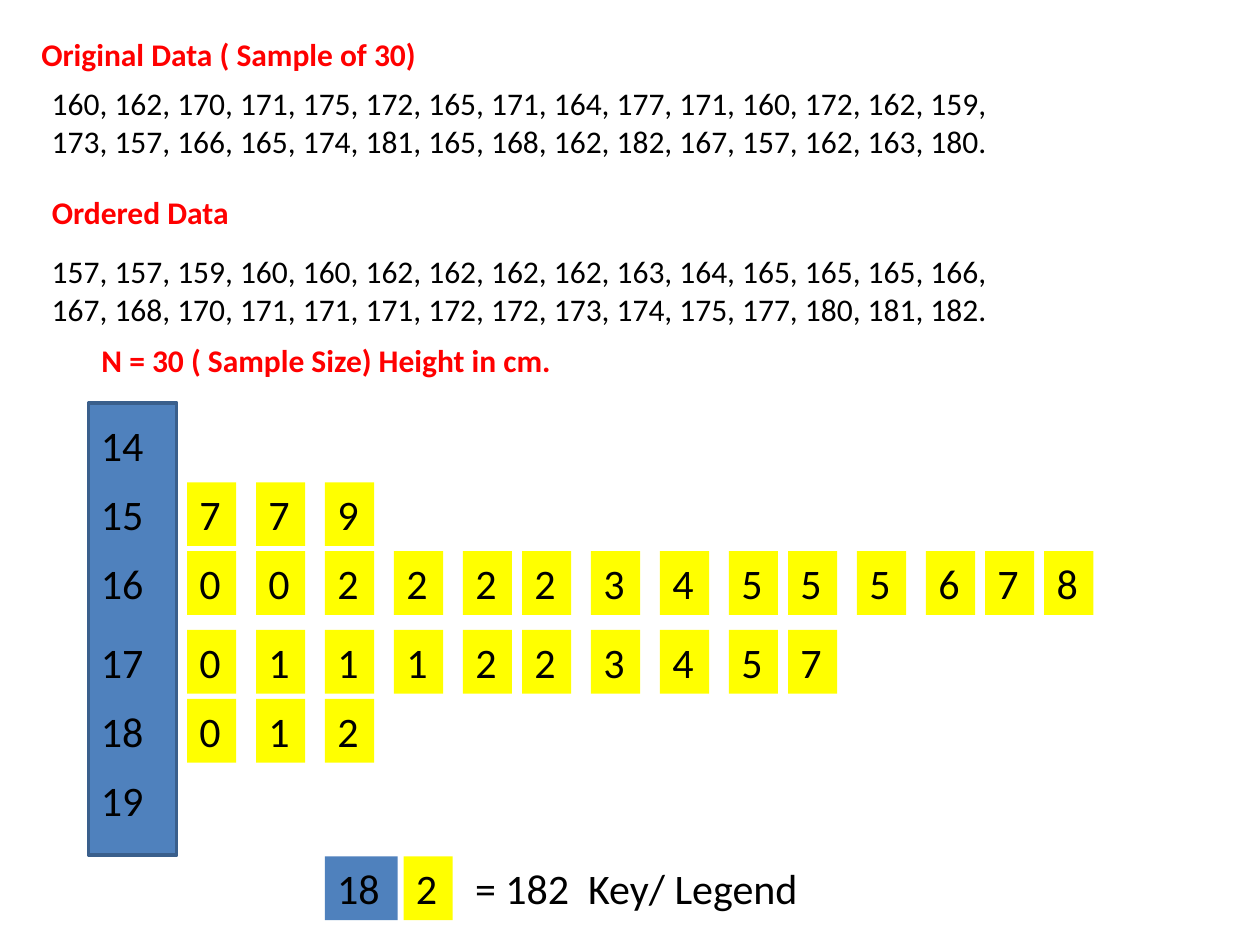
import itertools

import pptx
import pptx.dml.color
import pptx.enum.shapes
import pptx.enum.text
import pptx.util

Pt = pptx.util.Pt
RGBColor = pptx.dml.color.RGBColor
Align = pptx.enum.text.PP_ALIGN

BLUE = RGBColor(0x4F, 0x81, 0xBD)
DARK_BLUE = RGBColor(0x3A, 0x5F, 0x8C)
YELLOW = RGBColor(0xFF, 0xFF, 0x00)
RED = RGBColor(0xFF, 0x00, 0x00)
BLACK = RGBColor(0x00, 0x00, 0x00)

HEIGHTS = [
    160, 162, 170, 171, 175, 172, 165, 171, 164, 177, 171, 160, 172, 162, 159,
    173, 157, 166, 165, 174, 181, 165, 168, 162, 182, 167, 157, 162, 163, 180,
]
STEMS = range(14, 20)
PER_LINE = 15

PITCH = 39.4
NARROW_PITCH = 33.8
ROW_PITCHES = [PITCH, PITCH, 45, PITCH, PITCH]
NARROW_COLUMNS = {5, 9, 12, 13}
COLUMN_COUNT = 14
STEM_WIDTH, LEAF_WIDTH, CELL_HEIGHT = 41.7, 28.1, 36.4


def add_rectangle(shapes, box, fill, outline=None):
    rectangle = shapes.add_shape(
        pptx.enum.shapes.MSO_SHAPE.RECTANGLE, *map(Pt, box))
    rectangle.shadow.inherit = False
    rectangle.fill.solid()
    rectangle.fill.fore_color.rgb = fill
    if outline is None:
        rectangle.line.fill.background()
    else:
        rectangle.line.color.rgb = outline
        rectangle.line.width = Pt(2)
    return rectangle


def add_text(shapes, box, lines, size=24, color=BLACK, bold=False,
             align=Align.LEFT, fill=None):
    if fill is None:
        holder = shapes.add_textbox(*map(Pt, box))
    else:
        holder = add_rectangle(shapes, box, fill)
    frame = holder.text_frame
    frame.word_wrap = True
    frame.vertical_anchor = pptx.enum.text.MSO_ANCHOR.TOP
    frame.text = "\n".join(lines)
    for paragraph in frame.paragraphs:
        paragraph.alignment = align
        for run in paragraph.runs:
            run.font.name = "Calibri"
            run.font.size = Pt(size)
            run.font.bold = bold
            run.font.color.rgb = color


def data_lines(values):
    rows = [values[i:i + PER_LINE] for i in range(0, len(values), PER_LINE)]
    texts = [", ".join(map(str, row)) for row in rows]
    return [text + "," for text in texts[:-1]] + [texts[-1] + "."]


def add_data_lists(shapes, left, top, width):
    heading = {"size": 18, "color": RED, "bold": True}
    add_text(shapes, (left - 6, top, 262, 29),
             ["Original Data ( Sample of 30)"], **heading)
    add_text(shapes, (left, top + 28, width, 51), data_lines(HEIGHTS), size=18)
    add_text(shapes, (left, top + 90, 135, 29), ["Ordered Data"], **heading)
    add_text(shapes, (left, top + 124, width, 51),
             data_lines(sorted(HEIGHTS)), size=18)
    add_text(shapes, (left + 6, top + 175, 316, 29),
             ["N = 30 ( Sample Size) Height in cm."],
             align=Align.CENTER, **heading)


def add_stem_column(shapes, left, top, width, height, row_tops):
    stem_group = shapes.add_group_shape().shapes
    add_rectangle(stem_group, (left, top, width, height), BLUE, DARK_BLUE)
    for stem, row_top in zip(STEMS, row_tops):
        add_text(stem_group, (left, row_top, STEM_WIDTH, CELL_HEIGHT),
                 [str(stem)])


def add_leaves(shapes, left, row_tops):
    pitches = [NARROW_PITCH if column in NARROW_COLUMNS else PITCH
               for column in range(1, COLUMN_COUNT)]
    column_lefts = list(itertools.accumulate(pitches, initial=left))
    for stem, row_top in zip(STEMS, row_tops):
        leaves = sorted(h % 10 for h in HEIGHTS if h // 10 == stem)
        for leaf, leaf_left in zip(leaves, column_lefts):
            add_text(shapes, (leaf_left, row_top, LEAF_WIDTH, CELL_HEIGHT),
                     [str(leaf)], fill=YELLOW)


def add_stem_plot(shapes, left, top, width, height):
    row_tops = list(itertools.accumulate(ROW_PITCHES, initial=top + 6))
    add_stem_column(shapes, left, top, width, height, row_tops)
    add_leaves(shapes, left + width + 5.9, row_tops)


def add_key(shapes, left, top):
    key_group = shapes.add_group_shape().shapes
    add_text(key_group, (left, top, STEM_WIDTH, CELL_HEIGHT), ["18"],
             fill=BLUE)
    add_text(key_group, (left + 45, top, LEAF_WIDTH, CELL_HEIGHT), ["2"],
             fill=YELLOW)
    add_text(key_group, (left + 78.8, top, 225, CELL_HEIGHT),
             ["= 182  Key/ Legend"])


def main():
    deck = pptx.Presentation()
    deck.slide_width, deck.slide_height = Pt(720), Pt(540)
    shapes = deck.slides.add_slide(deck.slide_layouts[6]).shapes
    add_stem_plot(shapes, left=50.6, top=230.2, width=50.4, height=258.5)
    add_data_lists(shapes, left=22.5, top=16.6, width=621)
    add_key(shapes, left=185.6, top=489.4)
    deck.save("out.pptx")


if __name__ == "__main__":
    main()
